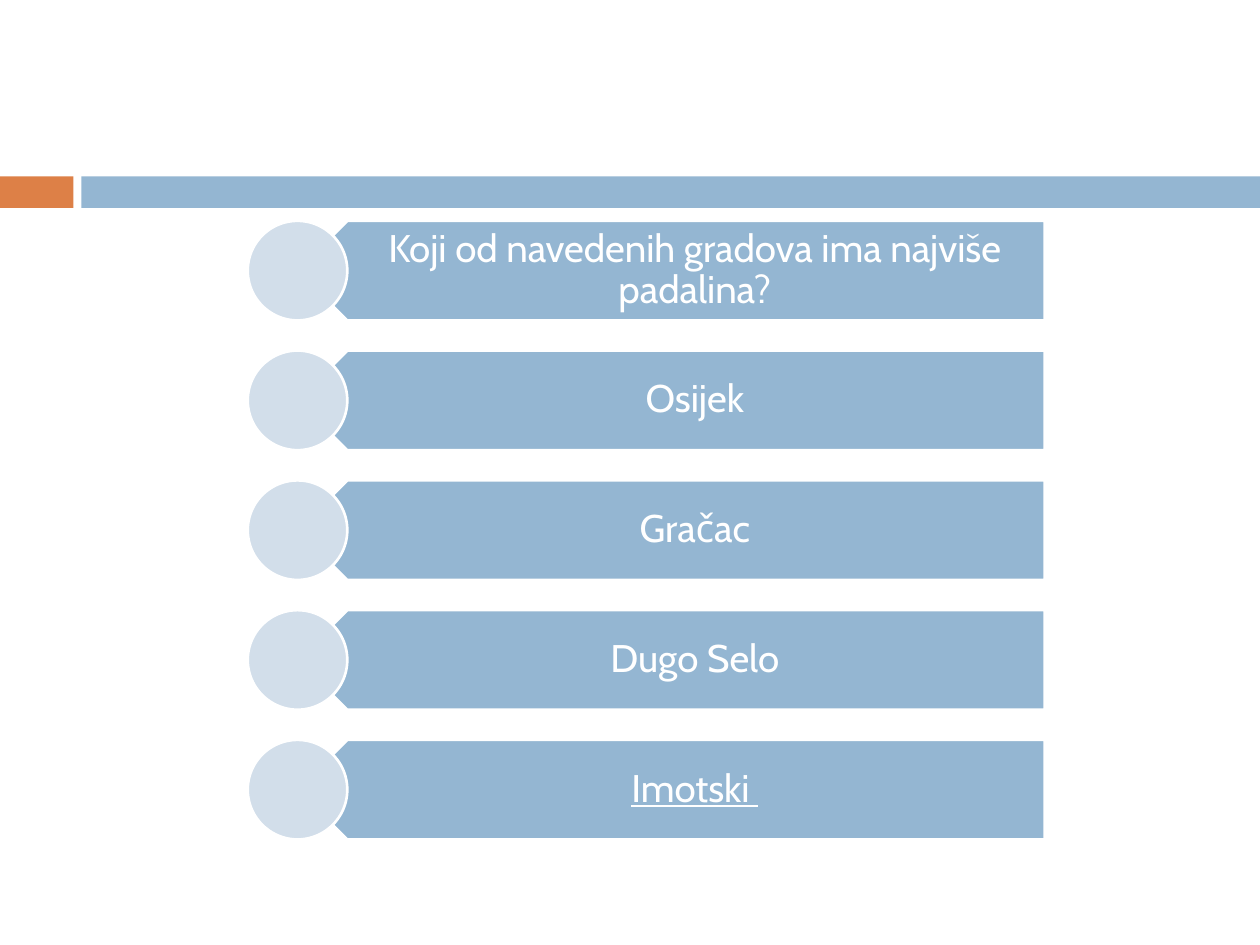
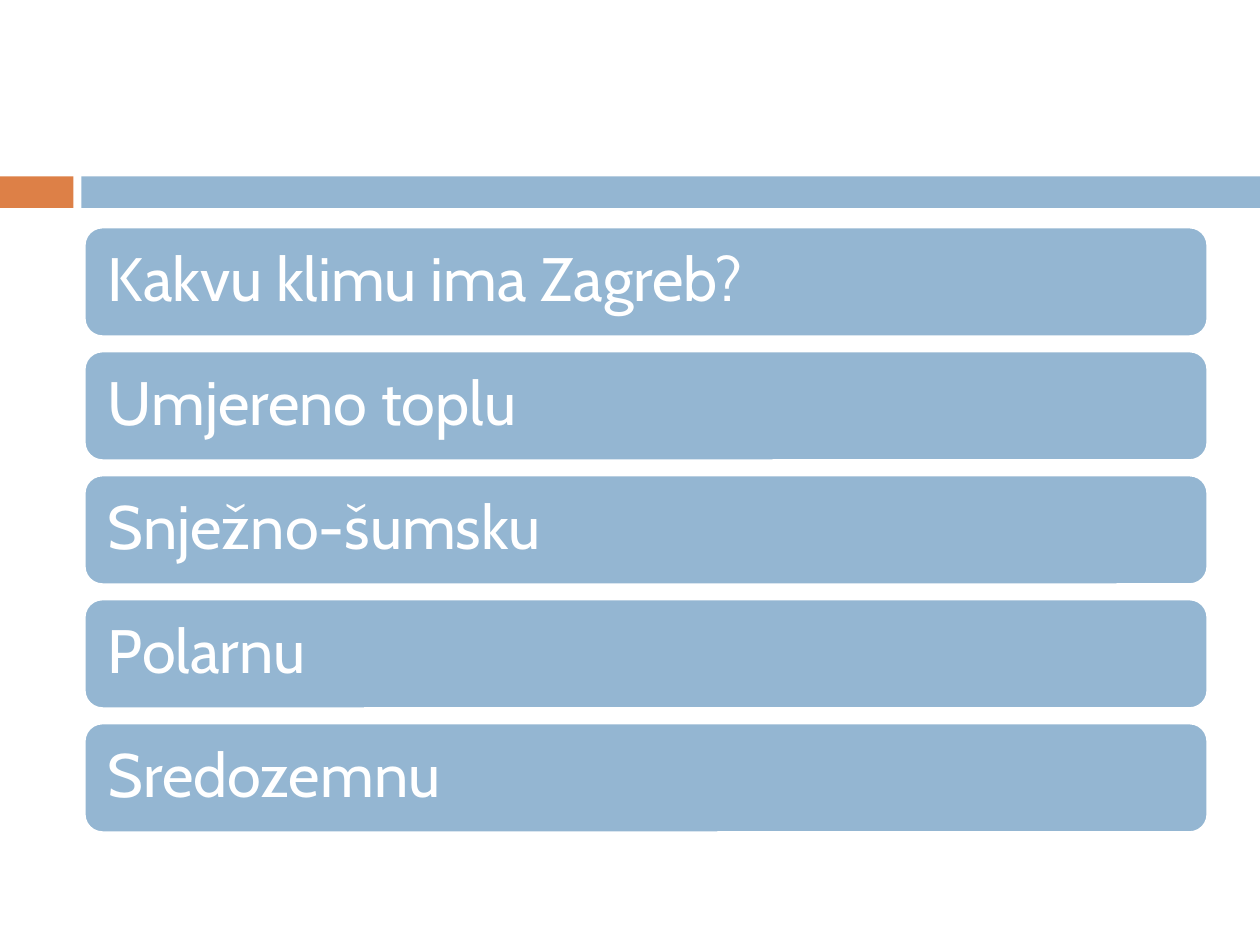
"""Build two geography quiz slides, each with a question and four answers."""
from pptx import Presentation
from pptx.dml.color import RGBColor
from pptx.enum.shapes import MSO_SHAPE
from pptx.enum.text import MSO_ANCHOR, PP_ALIGN
from pptx.util import Pt

ORANGE = RGBColor(0xDD, 0x80, 0x47)
BLUE = RGBColor(0x94, 0xB6, 0xD2)
PALE_BLUE = RGBColor(0xD2, 0xDE, 0xEA)
WHITE = RGBColor(0xFF, 0xFF, 0xFF)
FONT = "Cabin"


def add_block(slide, preset, left, top, width, height, fill, outlined=True):
    block = slide.shapes.add_shape(preset, Pt(left), Pt(top), Pt(width), Pt(height))
    block.shadow.inherit = False
    block.fill.solid()
    block.fill.fore_color.rgb = fill
    if outlined:
        block.line.color.rgb = WHITE
        block.line.width = Pt(1.5)
    else:
        block.line.fill.background()
    return block


def write_line(holder, text, size, alignment, insets):
    frame = holder.text_frame
    frame.word_wrap = True
    frame.vertical_anchor = MSO_ANCHOR.MIDDLE
    frame.margin_left, frame.margin_top, frame.margin_right, frame.margin_bottom = map(Pt, insets)
    paragraph = frame.paragraphs[0]
    paragraph.alignment = alignment
    paragraph.line_spacing = 0.9
    run = paragraph.add_run()
    run.text = text
    run.font.name = FONT
    run.font.size = Pt(size)
    run.font.color.rgb = WHITE
    return run


prs = Presentation()
prs.slide_width, prs.slide_height = Pt(720), Pt(540)
rainfall, climate = [prs.slides.add_slide(prs.slide_layouts[6]) for _ in range(2)]

for slide in (rainfall, climate):
    add_block(slide, MSO_SHAPE.RECTANGLE, 0, 100.8, 42, 18, ORANGE, outlined=False)
    add_block(slide, MSO_SHAPE.RECTANGLE, 46.5, 100.8, 673.5, 18, BLUE, outlined=False)

rainfall_lines = [
    "Koji od navedenih gradova ima najviše padalina?",
    "Osijek",
    "Gračac",
    "Dugo Selo",
    "Imotski ",
]
BADGE = 56.9
for row, text in enumerate(rainfall_lines):
    top = 126.2 + row * 74.15
    arrow = add_block(rainfall, MSO_SHAPE.PENTAGON, 170, top, 427, BADGE, BLUE)
    arrow.rotation = 180
    label = rainfall.shapes.add_textbox(Pt(184.3), Pt(top), Pt(412.7), Pt(BADGE))
    run = write_line(label, text, 22, PP_ALIGN.CENTER, (25.1, 6.6, 12.3, 6.6))
    if text == rainfall_lines[-1]:
        run.font.underline = True
    add_block(rainfall, MSO_SHAPE.OVAL, 170 - BADGE / 2, top, BADGE, BADGE, PALE_BLUE)

climate_lines = [
    "Kakvu klimu ima Zagreb?",
    "Umjereno toplu",
    "Snježno-šumsku",
    "Polarnu",
    "Sredozemnu",
]
for row, text in enumerate(climate_lines):
    bar = add_block(climate, MSO_SHAPE.ROUNDED_RECTANGLE, 48.2, 129.8 + row * 70.85, 642, 62.6, BLUE)
    write_line(bar, text, 35, PP_ALIGN.LEFT, (10.5, 10.5, 10.5, 10.5))

prs.save("out.pptx")
